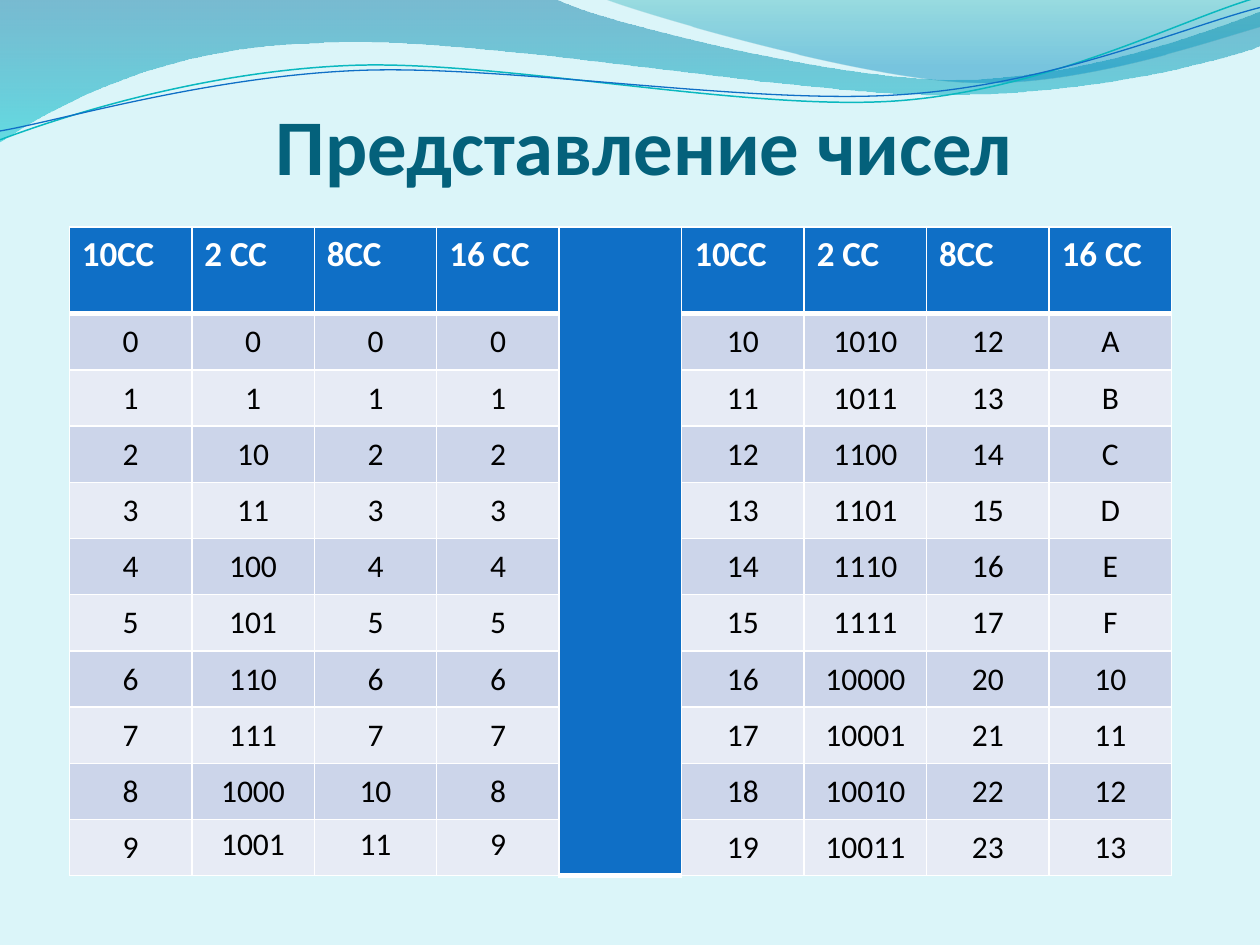
from math import cos, radians, sin
from typing import NamedTuple

from lxml.etree import SubElement
from pptx import Presentation
from pptx.dml.color import RGBColor
from pptx.enum.text import MSO_ANCHOR as Anchor, PP_ALIGN as Align
from pptx.oxml.ns import qn
from pptx.util import Inches, Pt

FONT = "Calibri"
BLUE, WHITE, BLACK, TEAL = "0F6FC6", "FFFFFF", "000000", "04617B"
BANDS = ("CCD5EA", "E7EBF5")


class Stop(NamedTuple):
    position: float
    color: str
    opacity: int


class Wave(NamedTuple):
    start: tuple
    segments: list  # 2 numbers: straight line; 6 numbers: cubic curve
    stops: tuple = ()
    line: str = ""
    width: float = 0
    center: tuple = (0, 0)  # pivot of the tilt
    tilt: float = 0  # degrees


class CellStyle(NamedTuple):
    fill: str
    color: str
    size: int
    bold: bool
    align: Align
    anchor: Anchor
    inset: float = 0  # points; 0 keeps the default margins


# Decoration at the top of the slide, in inches
WAVES = [
    Wave((0, 0), [
        (4.4, -0.01),
        (4.76, 0.17, 6.64, 0.63, 7.58, 0.63), (8.53, 0.63, 9.58, 0.26, 10, 0.09),
        (10.01, 0.36),
        (9.83, 0.44, 8.7, 0.76, 7.46, 0.75), (6.22, 0.75, 3.82, 0.28, 2.57, 0.34),
        (1.29, 0.36, 0.46, 0.83, -0.01, 1.13),
        (0, 0),
    ], stops=(Stop(0, "0074A1", 45), Stop(1, "00C6CF", 55))),
    Wave((4.79, -0.01), [
        (5.09, 0.11, 6.82, 0.62, 7.69, 0.65), (8.56, 0.69, 9.61, 0.32, 10, 0.21),
        (10, 0), (4.79, -0.01),
    ], stops=(Stop(0, "00A1A9", 30), Stop(0.8, "008BBF", 45))),
    Wave((0, 1.11), [
        (0.48, 0.93, 1.58, 0.57, 2.77, 0.52), (3.95, 0.47, 5.93, 0.89, 7.13, 0.8),
        (8.33, 0.71, 9.38, 0.15, 9.98, -0.02),
    ], line="0AB8BF", width=0.85, center=(4.99, 0.57), tilt=-2.7),
    Wave((0, 1.04), [
        (0.47, 0.96, 1.64, 0.61, 2.83, 0.56), (4.03, 0.51, 5.97, 0.84, 7.17, 0.75),
        (8.36, 0.67, 9.41, 0.21, 10, 0.06),
    ], line=BLUE, width=0.75, center=(5, 0.59), tilt=-2.7),
]

# Table grid
HEADINGS = ("10СС", "2 СС", "8СС", "16 СС")
DIGITS = 10
COLS, DIVIDER = 2 * len(HEADINGS) + 1, len(HEADINGS)
COL_W, HEAD_H, ROW_H = 8.75 / COLS, 0.69, 0.44

HEAD = CellStyle(BLUE, WHITE, 20, True, Align.LEFT, Anchor.TOP)
BODY = CellStyle(BANDS[0], BLACK, 18, False, Align.CENTER, Anchor.MIDDLE, 5.25)


def rgb(value: str) -> RGBColor:
    return RGBColor.from_string(value)


def level(wave: Wave, numbers: tuple) -> list:
    """Points of a segment in EMU, with the tilt of the wave taken out."""
    (cx, cy), a = wave.center, radians(-wave.tilt)
    offsets = [(x - cx, y - cy) for x, y in zip(numbers[::2], numbers[1::2])]
    return [(Inches(cx + dx * cos(a) - dy * sin(a)), Inches(cy + dx * sin(a) + dy * cos(a)))
            for dx, dy in offsets]


def draw_wave(slide, wave: Wave) -> None:
    segments = [level(wave, seg) for seg in wave.segments]
    builder = slide.shapes.build_freeform(*level(wave, wave.start)[0])
    builder.add_line_segments([seg[-1] for seg in segments], close=bool(wave.stops))
    sp = builder.convert_to_shape()
    sp.shadow.inherit = False
    # Give the curved segments their control points
    for node, (*controls, _) in zip(list(sp._element.spPr.iter(qn("a:lnTo"))), segments):
        if controls:
            node.tag = qn("a:cubicBezTo")
        for i, (x, y) in enumerate(controls):
            node.insert(i, SubElement(node, qn("a:pt"), x=str(x - sp.left), y=str(y - sp.top)))
    sp.rotation = wave.tilt
    if not wave.stops:
        sp.fill.background()
        sp.line.color.rgb = rgb(wave.line)
        sp.line.width = Pt(wave.width)
        return
    sp.line.fill.background()
    sp.fill.gradient()
    sp.fill.gradient_angle = 270
    for target, stop in zip(sp.fill.gradient_stops, wave.stops):
        target.position = stop.position
        target.color.rgb = rgb(stop.color)
    for clr, stop in zip(sp._element.spPr.iter(qn("a:srgbClr")), wave.stops):
        SubElement(clr, qn("a:alpha"), val=str(stop.opacity * 1000))


def draw_title(slide, text: str) -> None:
    tf = slide.shapes.add_textbox(Inches(2.19), Inches(0.77), Inches(6.72), Inches(0.76)).text_frame
    tf.word_wrap = True
    tf.margin_left = tf.margin_right = tf.margin_top = tf.margin_bottom = 0
    p = tf.paragraphs[0]
    p.text = text
    p.font.name, p.font.size, p.font.bold = FONT, Pt(45), True
    p.font.color.rgb = rgb(TEAL)


def set_borders(cell, top: float, bottom: float) -> None:
    tc_pr = cell._tc.get_or_add_tcPr()
    for side, width in (("L", 1), ("R", 1), ("T", top), ("B", bottom)):
        ln = SubElement(tc_pr, qn(f"a:ln{side}"), w=str(Pt(width)))
        SubElement(SubElement(ln, qn("a:solidFill")), qn("a:srgbClr"), val=WHITE)


def style_cell(cell, text: str, style: CellStyle) -> None:
    cell.fill.solid()
    cell.fill.fore_color.rgb = rgb(style.fill)
    cell.vertical_anchor = style.anchor
    if style.inset:
        cell.margin_left = cell.margin_right = Pt(style.inset)
        cell.margin_top = cell.margin_bottom = Pt(style.inset)
    p = cell.text_frame.paragraphs[0]
    p.text = text
    p.alignment = style.align
    p.font.name, p.font.size, p.font.bold = FONT, Pt(style.size), style.bold
    p.font.color.rgb = rgb(style.color)


def body_style(row: int, col: int) -> CellStyle:
    style = BODY._replace(fill=BANDS[(row - 1) % 2])
    if row == DIGITS and col < DIVIDER:  # last row of the left half
        style = style._replace(inset=0, anchor=Anchor.TOP if col else Anchor.MIDDLE)
    return style


def draw_table(slide) -> None:
    rows = DIGITS + 1
    table = slide.shapes.add_table(rows, COLS, Inches(0.55), Inches(1.8), Inches(COL_W * COLS),
                                   Inches(HEAD_H + ROW_H * DIGITS)).table
    for column in table.columns:
        column.width = Inches(COL_W)
    for r, row in enumerate(table.rows):
        row.height = Inches(ROW_H if r else HEAD_H)
        # Each half shows one number in the four number systems
        halves = [[f"{n:{base}}" for base in "dboX"] if r else HEADINGS
                  for n in (r - 1, r - 1 + DIGITS)]
        for c, text in enumerate([*halves[0], "", *halves[1]]):
            cell = table.cell(r, c)
            is_head = r == 0 or c == DIVIDER
            set_borders(cell, top=3 if r == 1 else 1, bottom=3 if is_head else 1)
            style_cell(cell, text, HEAD if is_head else body_style(r, c))
    table.cell(0, DIVIDER).merge(table.cell(rows - 1, DIVIDER))


def main() -> None:
    prs = Presentation()
    prs.slide_width, prs.slide_height = Inches(10), Inches(7.5)
    s = prs.slides.add_slide(prs.slide_layouts[6])
    s.background.fill.solid()
    s.background.fill.fore_color.rgb = rgb("DBF5F9")
    for wave in WAVES:
        draw_wave(s, wave)
    draw_title(s, "Представление чисел")
    draw_table(s)
    prs.save("out.pptx")


if __name__ == "__main__":
    main()
